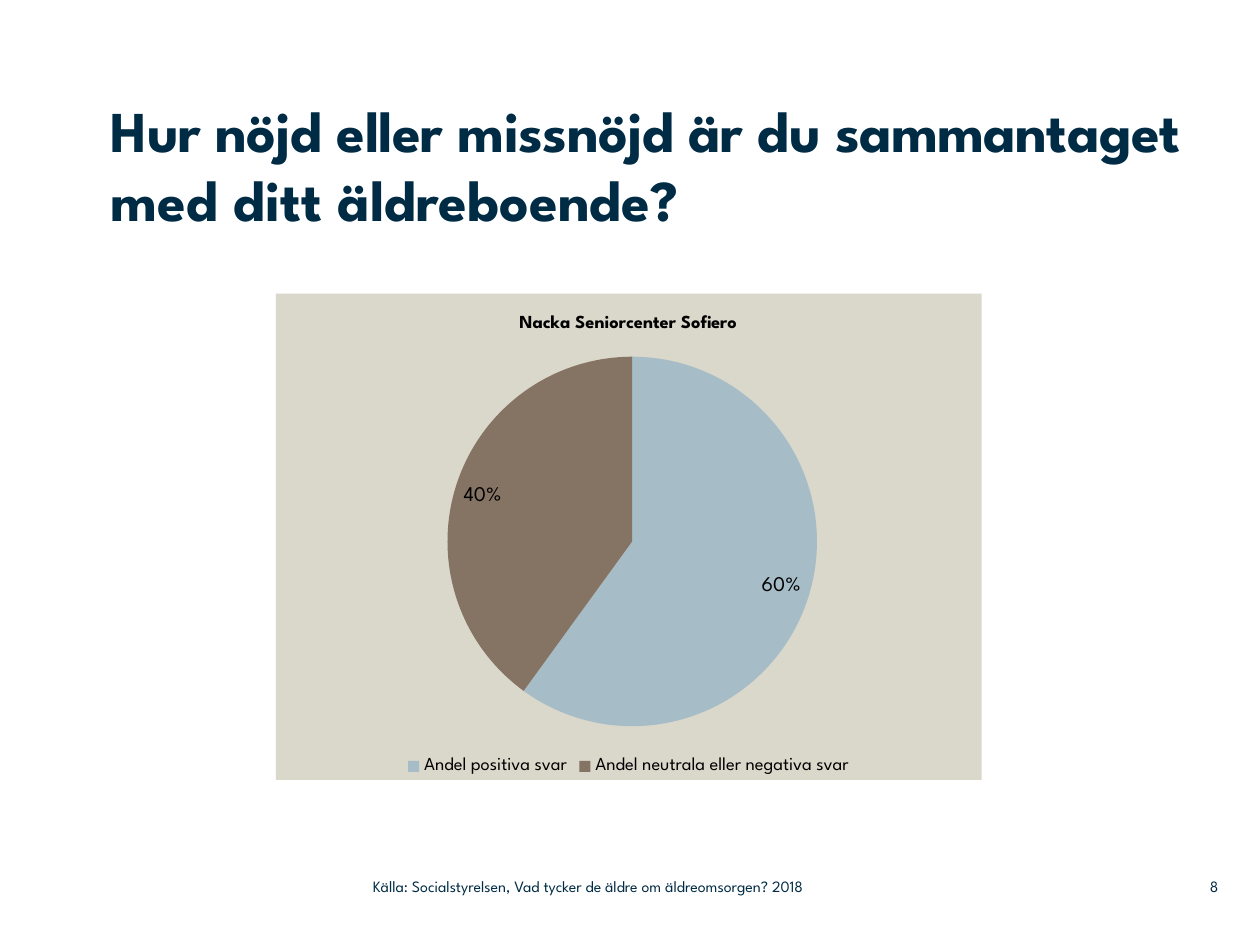
"""Build a survey result slide with a pie chart of overall satisfaction."""
from dataclasses import dataclass

import lxml.etree
import pptx
import pptx.chart.data
import pptx.dml.color
import pptx.enum.chart
import pptx.enum.text
import pptx.oxml
import pptx.oxml.ns
import pptx.slide
import pptx.util
from pptx.util import Inches

FONT = "League Spartan"
NAVY = pptx.dml.color.RGBColor(0x00, 0x2B, 0x45)
BLACK = pptx.dml.color.RGBColor(0x00, 0x00, 0x00)
SAND = pptx.dml.color.RGBColor(0xDA, 0xD7, 0xCB)
LIGHT_BLUE = pptx.dml.color.RGBColor(0xA6, 0xBC, 0xC6)
BROWN = pptx.dml.color.RGBColor(0x85, 0x73, 0x63)


@dataclass
class FooterText:
    text: str
    left: float
    width: float
    align: pptx.enum.text.PP_ALIGN


@dataclass
class Answer:
    label: str
    percent: int
    color: pptx.dml.color.RGBColor


FOOTERS = [
    FooterText("8", 9.2, 0.47, pptx.enum.text.PP_ALIGN.RIGHT),
    FooterText("Källa: Socialstyrelsen, Vad tycker de äldre om äldreomsorgen? 2018",
               2.96, 4.43, pptx.enum.text.PP_ALIGN.LEFT),
]
ANSWERS = [
    Answer("Andel positiva svar", 60, LIGHT_BLUE),
    Answer("Andel neutrala eller negativa svar", 40, BROWN),
]


def style_font(font, size: float, color: pptx.dml.color.RGBColor, bold: bool = False) -> None:
    font.name = FONT
    font.size = pptx.util.Pt(size)
    font.bold = bold
    font.color.rgb = color


def clear_margins(frame) -> None:
    frame.margin_left = frame.margin_right = frame.margin_top = frame.margin_bottom = 0
    frame.word_wrap = True


def add_question(slide: pptx.slide.Slide) -> None:
    question = slide.shapes.title
    question.left, question.top = Inches(0.88), Inches(0.75)
    question.width, question.height = Inches(8.83), Inches(1.42)
    frame = question.text_frame
    clear_margins(frame)
    frame.auto_size = pptx.enum.text.MSO_AUTO_SIZE.NONE
    frame.vertical_anchor = pptx.enum.text.MSO_ANCHOR.TOP
    frame.text = "Hur nöjd eller missnöjd är du sammantaget "
    paragraph = frame.paragraphs[0]
    paragraph.add_run().text = "med ditt äldreboende?"
    paragraph.alignment = pptx.enum.text.PP_ALIGN.LEFT
    paragraph.line_spacing = pptx.util.Pt(39.5)
    for run in paragraph.runs:
        style_font(run.font, 33, NAVY, bold=True)
    paragraph.runs[0].font._element.set("spc", "-30")


def add_footer(slide: pptx.slide.Slide, footer: FooterText) -> None:
    box = slide.shapes.add_textbox(
        Inches(footer.left), Inches(6.89), Inches(footer.width), Inches(0.29))
    frame = box.text_frame
    clear_margins(frame)
    frame.vertical_anchor = pptx.enum.text.MSO_ANCHOR.MIDDLE
    frame.text = footer.text
    frame.paragraphs[0].alignment = footer.align
    style_font(frame.paragraphs[0].runs[0].font, 9, NAVY)


def place_plot(chart) -> None:
    plot_area = chart._chartSpace.chart.plotArea
    for old_layout in plot_area.findall(pptx.oxml.ns.qn("c:layout")):
        plot_area.remove(old_layout)
    layout = lxml.etree.Element(pptx.oxml.ns.qn("c:layout"))
    manual = lxml.etree.SubElement(layout, pptx.oxml.ns.qn("c:manualLayout"))
    settings = {"layoutTarget": "inner", "xMode": "edge", "yMode": "edge",
                "x": "0.24", "y": "0.13", "w": "0.53", "h": "0.76"}
    for tag, value in settings.items():
        lxml.etree.SubElement(manual, pptx.oxml.ns.qn(f"c:{tag}")).set("val", value)
    plot_area.insert(0, layout)


def fill_background(chart) -> None:
    properties = pptx.oxml.parse_xml(
        f'<c:spPr {pptx.oxml.ns.nsdecls("c", "a")}><a:solidFill><a:srgbClr val="{SAND}"/>'
        '</a:solidFill><a:ln><a:noFill/></a:ln></c:spPr>')
    chart._chartSpace.chart.addnext(properties)


def add_satisfaction_chart(slide: pptx.slide.Slide) -> None:
    data = pptx.chart.data.CategoryChartData()
    data.categories = [answer.label for answer in ANSWERS]
    data.add_series("Series 1", [answer.percent for answer in ANSWERS])
    chart = slide.shapes.add_chart(
        pptx.enum.chart.XL_CHART_TYPE.PIE,
        Inches(2.19), Inches(2.33), Inches(5.6), Inches(3.86), data).chart
    style_font(chart.font, 18, BLACK)

    chart.has_title = True
    heading = chart.chart_title.text_frame
    heading.text = "Nacka Seniorcenter Sofiero"
    style_font(heading.paragraphs[0].runs[0].font, 10.5, BLACK, bold=True)

    chart.has_legend = True
    chart.legend.position = pptx.enum.chart.XL_LEGEND_POSITION.BOTTOM
    chart.legend.include_in_layout = False
    style_font(chart.legend.font, 10.5, BLACK)

    pie = chart.plots[0]
    pie.vary_by_categories = True
    for index, answer in enumerate(ANSWERS):
        slice_format = pie.series[0].points[index].format
        slice_format.fill.solid()
        slice_format.fill.fore_color.rgb = answer.color
        slice_format.line.fill.background()

    labels = pie.series[0].data_labels
    labels.show_percentage = True
    labels.show_value = False
    labels.number_format = "0%"
    labels.number_format_is_linked = False
    labels.position = pptx.enum.chart.XL_LABEL_POSITION.INSIDE_END
    style_font(labels.font, 12, BLACK)

    place_plot(chart)
    fill_background(chart)


def main() -> None:
    presentation = pptx.Presentation()
    presentation.slide_width, presentation.slide_height = Inches(10), Inches(7.5)
    slide = presentation.slides.add_slide(presentation.slide_layouts.get_by_name("Title Only"))
    add_question(slide)
    add_satisfaction_chart(slide)
    for footer in FOOTERS:
        add_footer(slide, footer)
    presentation.save("out.pptx")


if __name__ == "__main__":
    main()
